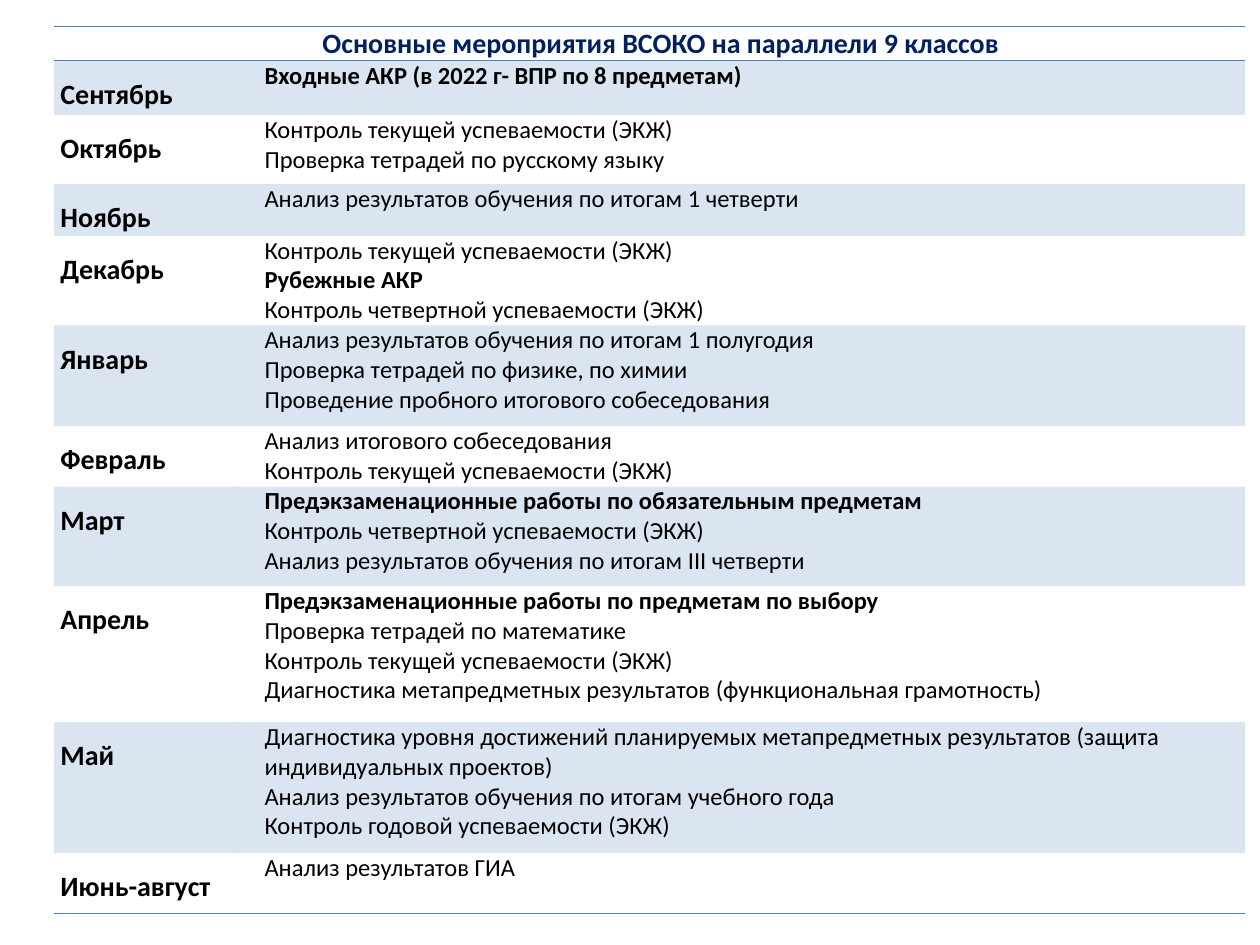
from lxml import etree
from pptx import Presentation
from pptx.dml.color import RGBColor
from pptx.enum import text
from pptx.oxml import ns
from pptx.util import Emu, Pt

# Grid: one unit is a thousandth of the slide width, the same on both axes
UNIT = 9144
WIDE, HIGH = 1000, 750
HUES = {"line": "4F81BD", "title": "002060", "ink": "000000"}
PLAIN = "{2D5ABB26-0587-4C30-8999-92F81FD0307C}"
COLS = (142, 803)
HEAD = 27
TITLE = "Основные мероприятия ВСОКО на параллели 9 классов"

# Month, row height, events; a leading star marks a bold event
CHECK = "Контроль текущей успеваемости (ЭКЖ)"
TERM = "Контроль четвертной успеваемости (ЭКЖ)"
PLAN = [
    ("Сентябрь", 43, ["*Входные АКР (в 2022 г- ВПР по 8 предметам)"]),
    ("Октябрь", 55, [CHECK, "Проверка тетрадей по русскому языку"]),
    ("Ноябрь", 41, ["Анализ результатов обучения по итогам 1 четверти"]),
    ("Декабрь", 71, [CHECK, "*Рубежные АКР", TERM]),
    ("Январь", 80, ["Анализ результатов обучения по итогам 1 полугодия",
                    "Проверка тетрадей по физике, по химии",
                    "Проведение пробного итогового собеседования"]),
    ("Февраль", 48, ["Анализ итогового собеседования", CHECK]),
    ("Март", 79, ["*Предэкзаменационные работы по обязательным предметам",
                  TERM,
                  "Анализ результатов обучения по итогам III четверти"]),
    ("Апрель", 108, ["*Предэкзаменационные работы по предметам по выбору",
                     "Проверка тетрадей по математике",
                     CHECK,
                     "Диагностика метапредметных результатов "
                     "(функциональная грамотность)"]),
    ("Май", 104, ["Диагностика уровня достижений планируемых метапредметных "
                  "результатов (защита индивидуальных проектов)",
                  "Анализ результатов обучения по итогам учебного года",
                  "Контроль годовой успеваемости (ЭКЖ)"]),
    ("Июнь-август", 48, ["Анализ результатов ГИА"]),
]


def grid(n):
    return Emu(int(n * UNIT))


def rule(cell, sides):
    """Draw thin lines on the named sides of a cell."""
    props = cell._tc.get_or_add_tcPr()
    for side in sides:
        line = etree.SubElement(props, ns.qn("a:ln" + side), w=str(Pt(1)))
        fill = etree.SubElement(line, ns.qn("a:solidFill"))
        etree.SubElement(fill, ns.qn("a:srgbClr"), val=HUES["line"])


def tint(cell, band):
    """Fill a banded cell with a pale tone, leave the rest clear."""
    if not band:
        cell.fill.background()
        return
    cell.fill.solid()
    cell.fill.fore_color.rgb = RGBColor.from_string(HUES["line"])
    tone = cell._tc.tcPr.find(".//" + ns.qn("a:srgbClr"))
    etree.SubElement(tone, ns.qn("a:alpha"), val="20000")


def write(cell, lines, size, hue="ink", inset=0, **form):
    """Write lines as paragraphs; form holds paragraph settings."""
    sides = {"margin_left": 5, "margin_right": 5,
             "margin_top": 0, "margin_bottom": 0}
    for name, gap in sides.items():
        setattr(cell, name, grid(gap))
    frame = cell.text_frame
    for i, line in enumerate(lines):
        para = frame.paragraphs[0] if i == 0 else frame.add_paragraph()
        for name, value in form.items():
            setattr(para, name, value)
        props = para._p.get_or_add_pPr()
        props.set("marL", str(grid(inset)))
        props.set("indent", "0")
        if not line:
            para._p.get_or_add_endParaRPr().set("sz", str(size * 100))
            continue
        run = para.add_run()
        run.text = line.lstrip("*")
        style = {"name": "Calibri", "size": Pt(size),
                 "bold": size > 14 or line.startswith("*")}
        for name, value in style.items():
            setattr(run.font, name, value)
        run.font.color.rgb = RGBColor.from_string(HUES[hue])


def plan(slide, left, top):
    """Place the yearly plan with its corner at left, top."""
    tall = [HEAD] + [row[1] for row in PLAN]
    box = map(grid, (left, top, sum(COLS), sum(tall)))
    table = slide.shapes.add_table(len(tall), len(COLS), *box).table
    table.first_row = table.horz_banding = False
    table._tbl.tblPr.find(ns.qn("a:tableStyleId")).text = PLAIN
    for col, size in zip(table.columns, COLS):
        col.width = grid(size)
    for row, size in zip(table.rows, tall):
        row.height = grid(size)

    # Title row
    write(table.cell(0, 0), [""], 14)
    write(table.cell(0, 1), [TITLE], 16, "title", inset=66)

    # Month rows
    for i, (month, _, events) in enumerate(PLAN, 1):
        write(table.cell(i, 0), [month], 16, line_spacing=1.5)
        cell = table.cell(i, 1)
        write(cell, events, 14, inset=20, alignment=text.PP_ALIGN.JUSTIFY)
        for para in cell.text_frame.paragraphs:
            if len(para.text) > 80:
                para.alignment = text.PP_ALIGN.LEFT

    # Lines and bands
    edges = {0: "TB", len(PLAN): "B"}
    for i in range(len(tall)):
        for j in range(len(COLS)):
            rule(table.cell(i, j), edges.get(i, ""))
            tint(table.cell(i, j), i % 2)


def main():
    deck = Presentation()
    deck.slide_width, deck.slide_height = grid(WIDE), grid(HIGH)
    slide = deck.slides.add_slide(deck.slide_layouts[6])
    plan(slide, 43, 21)
    deck.save("out.pptx")


if __name__ == "__main__":
    main()
